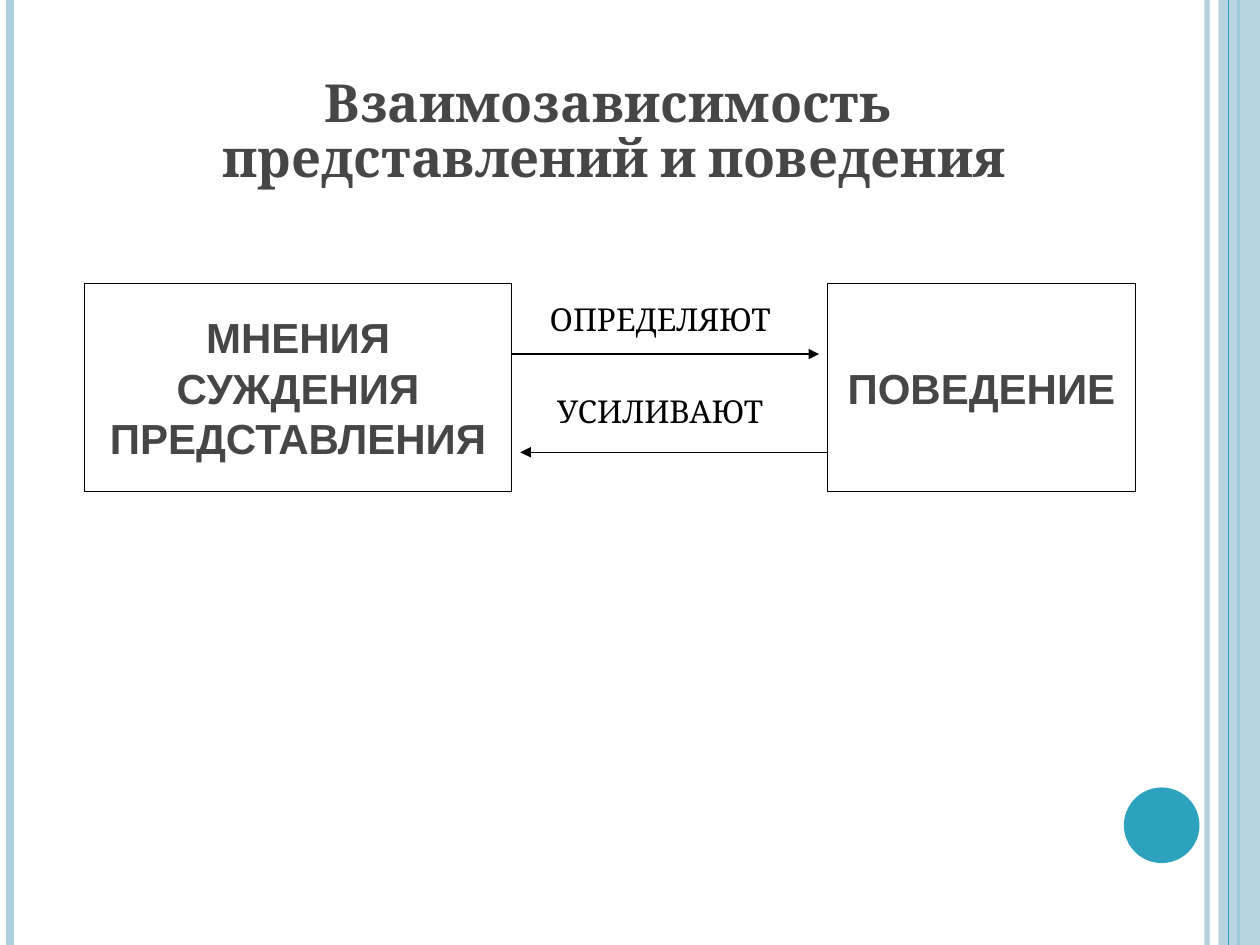
from lxml.etree import SubElement
from pptx import Presentation
from pptx.dml.color import RGBColor
from pptx.enum.shapes import MSO_CONNECTOR, MSO_SHAPE
from pptx.enum.text import MSO_ANCHOR, MSO_AUTO_SIZE, PP_ALIGN
from pptx.oxml.ns import qn
from pptx.util import Inches, Pt

COLORS = {"pale": "ADCEDC", "teal": "2DA2BF", "grey": "464646", "black": "000000"}
TITLE = {"name": "Cambria", "size": Pt(30), "bold": True}
LABEL = {"name": "Cambria", "size": Pt(18), "bold": False}
BOX = {"name": "Arial", "size": Pt(24), "bold": True}


def rgb(name):
    return RGBColor.from_string(COLORS[name])


def set_alpha(fill_parent, percent):
    clr = next(fill_parent.iter(qn("a:srgbClr")))
    SubElement(clr, qn("a:alpha"), val=str(percent * 1000))


def place(sp, box):
    for name, value in zip(("left", "top", "width", "height"), box):
        setattr(sp, name, Inches(value))


def write(tf, lines, font, color):
    for i, line in enumerate(lines):
        p = tf.paragraphs[0] if i == 0 else tf.add_paragraph()
        p.text = line
        p.alignment = PP_ALIGN.CENTER
        for r in p.runs:
            r.font.color.rgb = rgb(color)
            for name, value in font.items():
                setattr(r.font, name, value)


def add_line(s, start, end, color, width, arrow=False, alpha=None):
    c = s.shapes.add_connector(MSO_CONNECTOR.STRAIGHT, *map(Inches, start + end))
    c.line.color.rgb = rgb(color)
    c.line.width = Pt(width)
    if alpha:
        set_alpha(c.line._get_or_add_ln(), alpha)
    if arrow:
        SubElement(c.line._get_or_add_ln(), qn("a:tailEnd"), type="triangle")
    SubElement(c._element.spPr, qn("a:effectLst"))


def add_shape(s, kind, box, fill=None, line=None):
    sp = s.shapes.add_shape(kind, *map(Inches, box))
    sp.shadow.inherit = False
    if fill:
        sp.fill.solid()
        sp.fill.fore_color.rgb = rgb(fill)
    else:
        sp.fill.background()
    if line:
        sp.line.color.rgb = rgb(line)
        sp.line.width = Pt(0.75)
    else:
        sp.line.fill.background()
    return sp


def add_frame(s, width, height):
    def rule(x, color, weight, alpha=None):
        add_line(s, (x, 0), (x, height), color, weight, alpha=alpha)

    rule(width - 0.42, "pale", 3, 93)
    rule(0.08, "pale", 4.5)
    rule(width - 0.17, "teal", 1.5)
    band = add_shape(s, MSO_SHAPE.RECTANGLE, (width - 0.33, 0, 0.33, height), "pale")
    set_alpha(band._element.spPr, 87)
    rule(width - 0.25, "teal", 0.75)
    add_shape(s, MSO_SHAPE.OVAL, (width - 1.08, height - 1.25, 0.6, 0.6), "teal")


def add_title(s, box):
    sp = s.shapes.title
    place(sp, box)
    tf = sp.text_frame
    tf.auto_size = MSO_AUTO_SIZE.NONE
    tf.vertical_anchor = MSO_ANCHOR.BOTTOM
    write(tf, ["Взаимозависимость \vпредставлений и поведения"], TITLE, "grey")
    tf.paragraphs[0].line_spacing = 0.88


def add_labels(s, box, lines):
    sp = s.placeholders[1]
    place(sp, box)
    tf = sp.text_frame
    tf.auto_size = MSO_AUTO_SIZE.NONE
    write(tf, lines, LABEL, "black")
    for p, gap in zip(tf.paragraphs, (6, 31)):
        p.space_before = Pt(gap)
        pPr = p._p.get_or_add_pPr()
        pPr.set("marL", "0")
        pPr.set("indent", "0")
        SubElement(pPr, qn("a:buNone"))


def add_box(s, box, lines):
    sp = add_shape(s, MSO_SHAPE.RECTANGLE, box, line="black")
    tf = sp.text_frame
    tf.word_wrap = False
    tf.vertical_anchor = MSO_ANCHOR.MIDDLE
    write(tf, lines, BOX, "grey")


def add_diagram(s, box):
    left, top, width, height = box
    views_w, behaviour_w, gap = 3.39, 2.44, 0.07
    inner_left = left + views_w
    inner_right = left + width - behaviour_w
    add_labels(s, (inner_left, top + 0.08, 2.36, 2.2), ["ОПРЕДЕЛЯЮТ", "УСИЛИВАЮТ"])
    add_box(s, (left, top, views_w, height), ["МНЕНИЯ", "СУЖДЕНИЯ", "ПРЕДСТАВЛЕНИЯ"])
    add_box(s, (inner_right, top, behaviour_w, height), ["ПОВЕДЕНИЕ"])
    for y, start, end in (
        (top + 0.56, inner_left, inner_right - gap),
        (top + 1.34, inner_right, inner_left + gap),
    ):
        add_line(s, (start, y), (end, y), "black", 0.75, arrow=True)


def main():
    prs = Presentation()
    prs.slide_width, prs.slide_height = Inches(10), Inches(7.5)
    s = prs.slides.add_slide(prs.slide_layouts[1])
    add_frame(s, 10, 7.5)
    add_title(s, (0.5, 0.3, 8.75, 1.25))
    add_diagram(s, (0.67, 2.25, 8.34, 1.65))
    prs.save("out.pptx")


if __name__ == "__main__":
    main()
